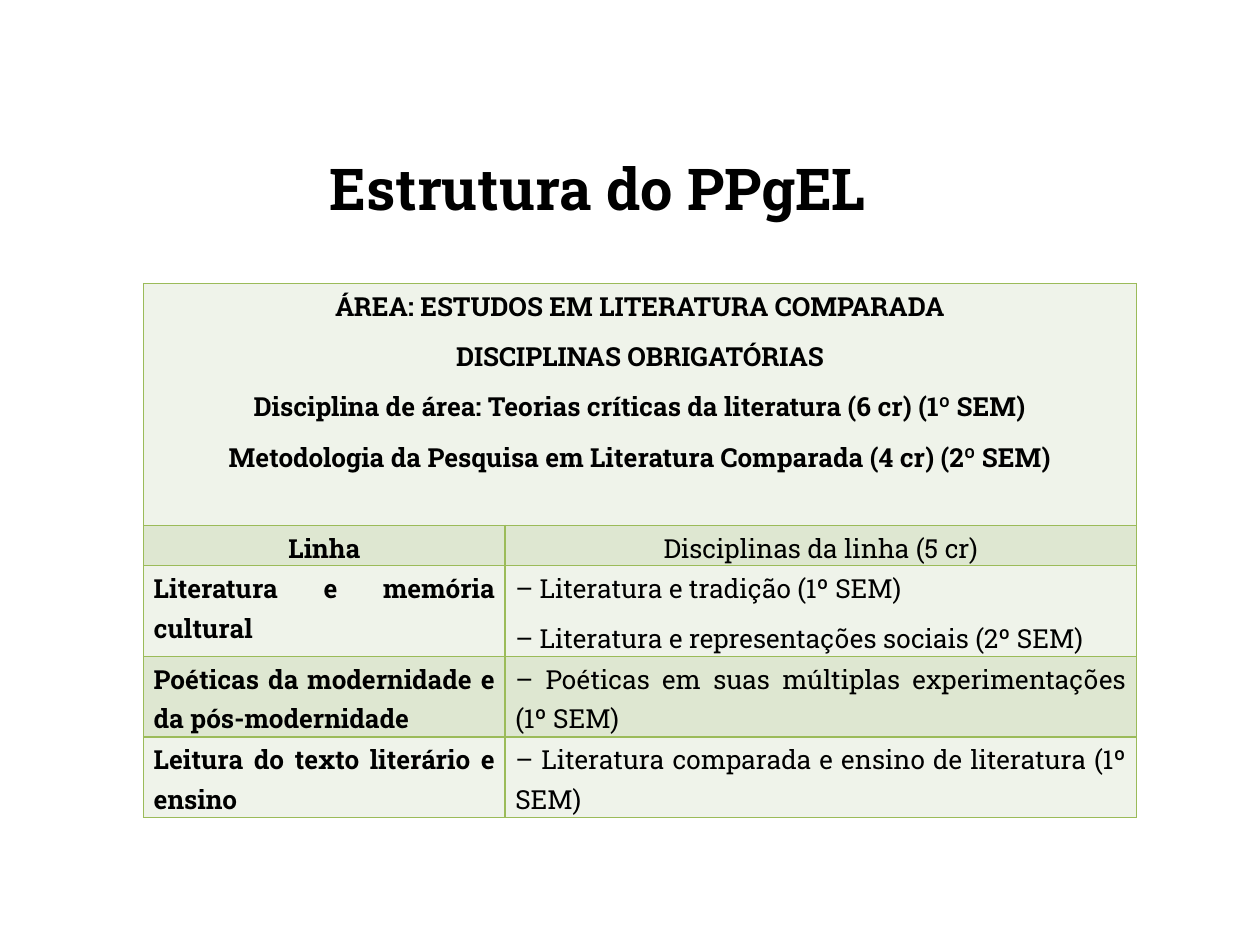
from pptx import Presentation
from pptx.dml.color import RGBColor
from pptx.enum.text import MSO_ANCHOR, PP_ALIGN
from pptx.oxml import parse_xml
from pptx.oxml.ns import nsdecls
from pptx.util import Inches, Pt

FACE = "Roboto Slab"
PALE, GREEN, EDGE = "EFF3EA", "DEE7D1", "9BBB59"
AREA = [
    "ÁREA: ESTUDOS EM LITERATURA COMPARADA",
    "DISCIPLINAS OBRIGATÓRIAS",
    "Disciplina de área: Teorias críticas da literatura (6 cr) (1º SEM)",
    "Metodologia da Pesquisa em Literatura Comparada (4 cr) (2º SEM)",
]
LINES = [
    ("Linha", ["Disciplinas da linha (5 cr)"]),
    ("Literatura e memória cultural",
     ["– Literatura e tradição (1º SEM)",
      "– Literatura e representações sociais (2º SEM)"]),
    ("Poéticas da modernidade e da pós-modernidade",
     ["– Poéticas em suas múltiplas experimentações (1º SEM)"]),
    ("Leitura do texto literário e ensino",
     ["– Literatura comparada e ensino de literatura (1º SEM)"]),
]
WIDTHS = [2.87, 5.01]
HEIGHTS = [1.92, 0.32, 0.72, 0.64, 0.64]


def color(code):
    """Turn a hex string into a colour."""
    return RGBColor.from_string(code)


def write(frame, texts, size, bold, align):
    """Fill a text frame with one paragraph for each text."""
    frame.word_wrap = True
    for i, text in enumerate(texts):
        para = frame.paragraphs[0] if i == 0 else frame.add_paragraph()
        para.text = text
        para.alignment = align
        font = para.font
        font.name, font.size, font.bold = FACE, Pt(size), bold
        font.color.rgb = color("000000")


def border(cell, code):
    """Draw a one-point line on all four sides of a cell."""
    props = cell._tc.get_or_add_tcPr()
    for i, side in enumerate("LRTB"):
        props.insert(i, parse_xml(
            f'<a:ln{side} {nsdecls("a")} w="{Pt(1)}"><a:solidFill>'
            f'<a:srgbClr val="{code}"/></a:solidFill></a:ln{side}>'))


def fill_cell(cell, texts, bold, align):
    """Set the text and spacing of a table cell."""
    write(cell.text_frame, texts, 15, bold, align)
    for para in cell.text_frame.paragraphs:
        para.line_spacing = 1.15
        para.space_after = Pt(6)


def add_title(slide, left, top, width, height):
    """Place the centred heading in its box."""
    box = slide.shapes.add_textbox(
        Inches(left), Inches(top), Inches(width), Inches(height))
    box.text_frame.vertical_anchor = MSO_ANCHOR.MIDDLE
    write(box.text_frame, ["Estrutura do PPgEL"], 33, True, PP_ALIGN.CENTER)


def add_grid(slide, left, top):
    """Place the table of research lines and courses."""
    table = slide.shapes.add_table(
        len(HEIGHTS), len(WIDTHS), Inches(left), Inches(top),
        Inches(sum(WIDTHS)), Inches(sum(HEIGHTS))).table
    for col, width in zip(table.columns, WIDTHS):
        col.width = Inches(width)
    for i, height in enumerate(HEIGHTS):
        row = table.rows[i]
        row.height = Inches(height)
        for cell in row.cells:
            cell.margin_left = cell.margin_right = Inches(0.08)
            cell.margin_top = cell.margin_bottom = 0
            cell.fill.solid()
            cell.fill.fore_color.rgb = color(GREEN if i % 2 else PALE)
            border(cell, EDGE)
    table.cell(0, 0).merge(table.cell(0, 1))
    fill_cell(table.cell(0, 0), AREA, True, PP_ALIGN.CENTER)
    for i, (line, courses) in enumerate(LINES, 1):
        align = PP_ALIGN.CENTER if i == 1 else PP_ALIGN.JUSTIFY
        fill_cell(table.cell(i, 0), [line], True, align)
        fill_cell(table.cell(i, 1), courses, False, align)


def main():
    """Build the slide and save it."""
    deck = Presentation()
    deck.slide_width, deck.slide_height = Inches(10), Inches(7.5)
    slide = deck.slides.add_slide(deck.slide_layouts[6])
    add_title(slide, 0.67, 1.12, 8.15, 0.74)
    add_grid(slide, 1.14, 2.25)
    deck.save("out.pptx")


if __name__ == "__main__":
    main()
